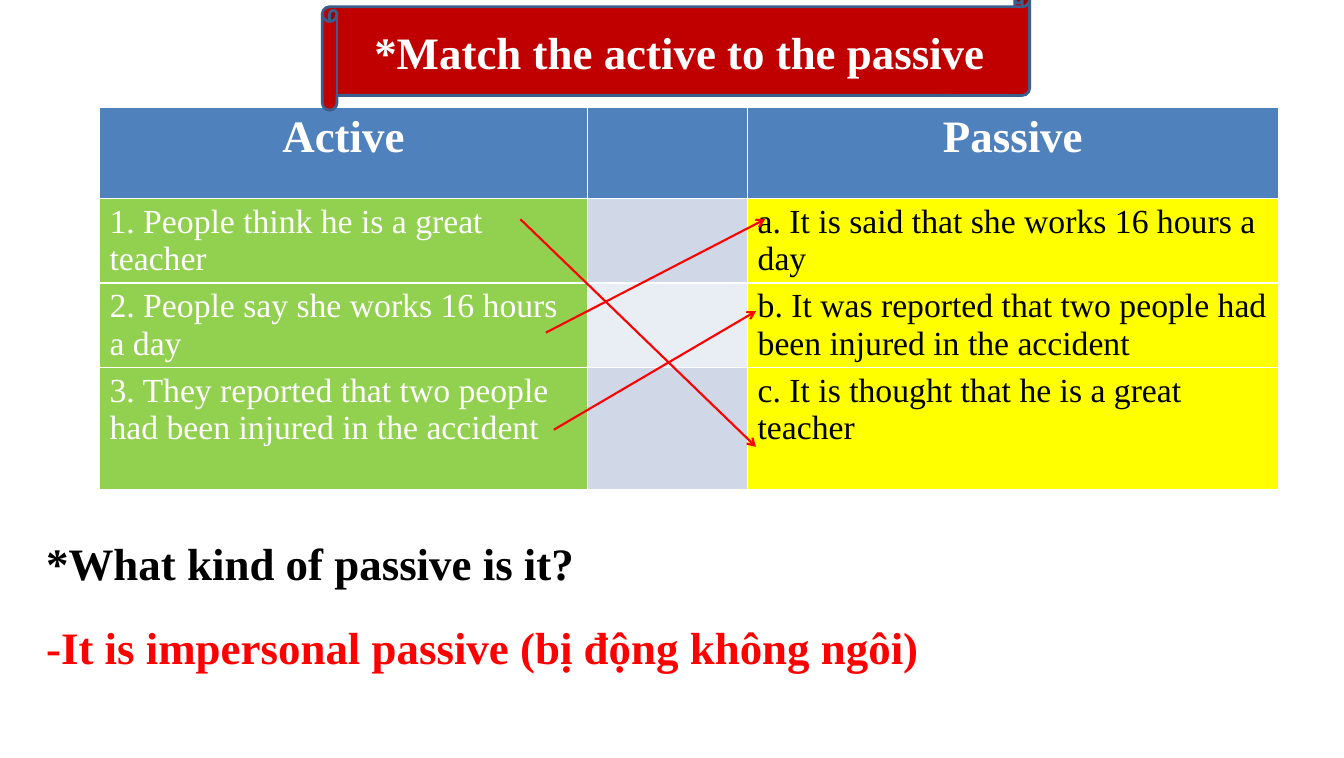
import pptx
import pptx.util
import pptx.dml.color
import pptx.enum.shapes
import pptx.enum.text
import pptx.oxml.ns
from lxml import etree

Cm, Pt = pptx.util.Cm, pptx.util.Pt
RGB = pptx.dml.color.RGBColor.from_string
ALIGN = pptx.enum.text.PP_ALIGN
qn = pptx.oxml.ns.qn

COLORS = {
    "white": "FFFFFF", "black": "000000", "red": "FF0000",
    "header": "4F81BD", "active": "92D050", "passive": "FFFF00",
    "band": "D0D8E8", "light_band": "E9EDF4",
    "scroll": "C00000", "scroll_line": "3A5F8C",
}


def write(tf, text, size=32, color="white", bold=True, align=ALIGN.LEFT):
    tf.word_wrap = True
    p = tf.paragraphs[0]
    p.alignment = align
    r = p.add_run()
    r.text = text
    r.font.name = "Times New Roman"
    r.font.size = Pt(size)
    r.font.bold = bold
    r.font.color.rgb = RGB(COLORS[color])


prs = pptx.Presentation()
prs.slide_width, prs.slide_height = Cm(33.78), Cm(19.05)
s = prs.slides.add_slide(prs.slide_layouts[6])

# Matching table; its white borders come from the default table style
rows = [
    ("Active", "", "Passive"),
    ("1. People think he is a great teacher", "",
     "a. It is said that she works 16 hours a day"),
    ("2. People say she works 16 hours a day", "",
     "b. It was reported that two people had been injured in the accident"),
    ("3. They reported that two people had been injured in the accident", "",
     "c. It is thought that he is a great teacher"),
]
col_widths = [12.27, 4.02, 13.34]
row_heights = [2.27, 2.13, 2.13, 3.07]
table = s.shapes.add_table(len(rows), len(col_widths), Cm(2.5), Cm(2.71),
                           Cm(sum(col_widths)), Cm(sum(row_heights))).table
for column, width in zip(table.columns, col_widths):
    column.width = Cm(width)
for i, texts in enumerate(rows):
    table.rows[i].height = Cm(row_heights[i])
    band = "band" if i % 2 else "light_band"
    fills = ("active", band, "passive") if i else ("header",) * 3
    for j, text in enumerate(texts):
        cell = table.cell(i, j)
        cell.fill.solid()
        cell.fill.fore_color.rgb = RGB(COLORS[fills[j]])
        if text and i == 0:
            write(cell.text_frame, text, align=ALIGN.CENTER)
        elif text:
            write(cell.text_frame, text, size=24, bold=False,
                  color="black" if j == 2 else "white")

# Answer arrows
for x1, y1, x2, y2 in [(13.08, 5.51, 19, 11.23),
                       (13.72, 8.36, 19.23, 5.51),
                       (13.92, 10.8, 19, 7.82)]:
    arrow = s.shapes.add_connector(pptx.enum.shapes.MSO_CONNECTOR.STRAIGHT,
                                   Cm(x1), Cm(y1), Cm(x2), Cm(y2))
    arrow.line.color.rgb = RGB(COLORS["red"])
    arrow.line.width = Pt(1.5)
    etree.SubElement(arrow.line._get_or_add_ln(), qn("a:tailEnd"), type="arrow")
    etree.SubElement(arrow._element.spPr, qn("a:effectLst"))

# Question and answer
for text, top, width, color in [
        ("*What kind of passive is it?", 13.34, 16.05, "black"),
        ("-It is impersonal passive (bị động không ngôi)", 15.44, 22.96, "red")]:
    tf = s.shapes.add_textbox(Cm(0.91), Cm(top), Cm(width), Cm(1.63)).text_frame
    tf.auto_size = pptx.enum.text.MSO_AUTO_SIZE.SHAPE_TO_FIT_TEXT
    write(tf, text, color=color)

# Title scroll
scroll = s.shapes.add_shape(pptx.enum.shapes.MSO_SHAPE.HORIZONTAL_SCROLL,
                            Cm(8.1), Cm(-0.2), Cm(17.78), Cm(2.97))
scroll.shadow.inherit = False
scroll.fill.solid()
scroll.fill.fore_color.rgb = RGB(COLORS["scroll"])
scroll.line.color.rgb = RGB(COLORS["scroll_line"])
scroll.line.width = Pt(2)
scroll.text_frame.vertical_anchor = pptx.enum.text.MSO_ANCHOR.MIDDLE
write(scroll.text_frame, "*Match the active to the passive", align=ALIGN.CENTER)

prs.save("out.pptx")
